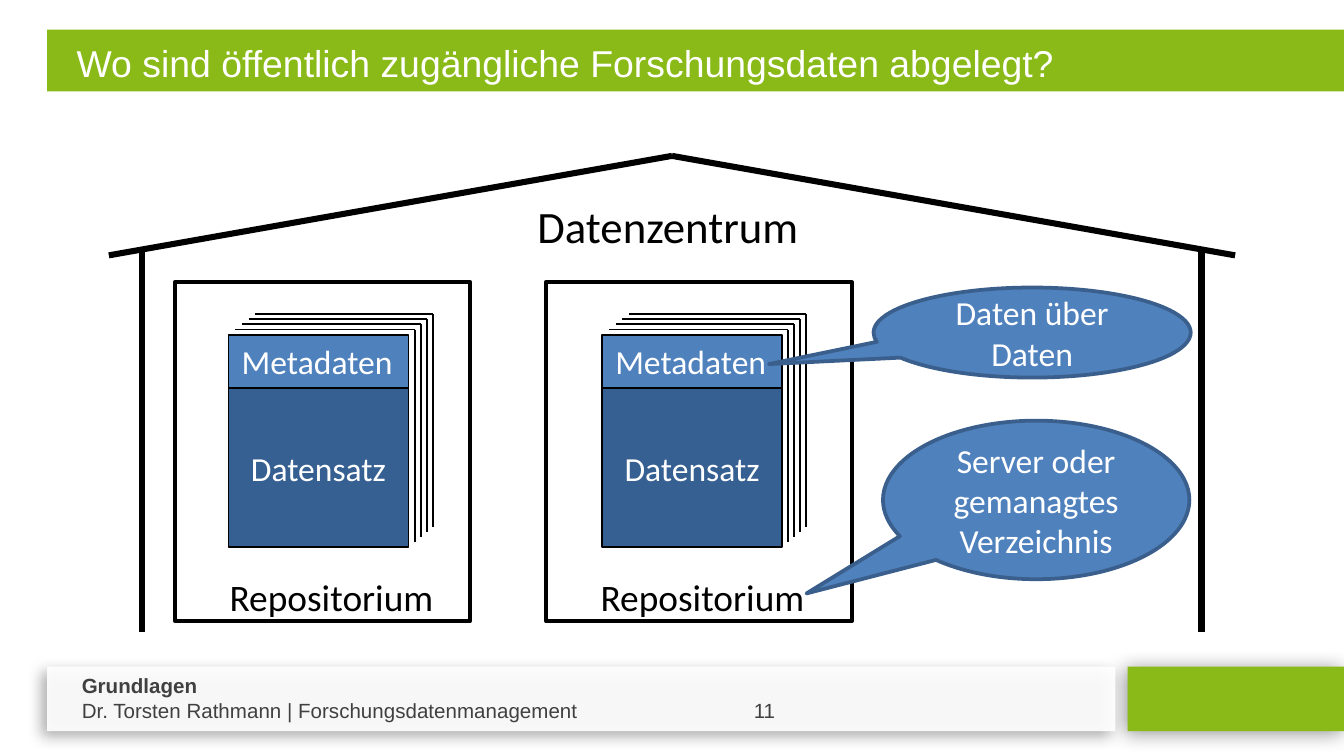
from lxml.etree import SubElement
from pptx import Presentation
from pptx.dml.color import RGBColor
from pptx.enum.shapes import MSO_CONNECTOR as Link, MSO_SHAPE as Shape
from pptx.enum.text import MSO_ANCHOR as Anchor, PP_ALIGN as Align
from pptx.oxml.ns import qn
from pptx.util import Inches, Pt

COLORS = {"green": "89BA17", "white": "FFFFFF", "grey": "404040", "black": "000000",
          "blue": "4F81BD", "navy": "376092", "edge": "3A5F8C"}
COLUMNS, ROWS = 100, 56.25
SHEETS = 4


def cells(count):
    """Convert grid cells of a tenth of an inch to a length."""
    return Inches(count / 10)


def color(name):
    """Look up a colour by name."""
    return RGBColor.from_string(COLORS[name])


def write(box, text, size, ink, font="Calibri", align=Align.LEFT, anchor=Anchor.TOP, wrap=True):
    """Put formatted text into a shape."""
    frame = box.text_frame
    frame.text = text
    frame.word_wrap = wrap
    frame.vertical_anchor = anchor
    for para in frame.paragraphs:
        para.alignment = align
        for span in para.runs:
            span.font.name, span.font.size = font, Pt(size)
            span.font.color.rgb = color(ink)


def add_label(slide, left, top, width, height, text, size, **style):
    """Add a text box."""
    box = slide.shapes.add_textbox(*map(cells, (left, top, width, height)))
    write(box, text, size, **style)
    return box


def add_block(slide, left, top, width, height, fill=None, line=None, weight=1, kind=Shape.RECTANGLE):
    """Add a flat shape with optional fill and outline."""
    block = slide.shapes.add_shape(kind, *map(cells, (left, top, width, height)))
    block.shadow.inherit = False
    if fill:
        block.fill.solid()
        block.fill.fore_color.rgb = color(fill)
    else:
        block.fill.background()
    if line:
        block.line.color.rgb = color(line)
        block.line.width = Pt(weight)
    else:
        block.line.fill.background()
    return block


def add_line(slide, start, end, weight=1):
    """Draw a straight black line between two grid points."""
    line = slide.shapes.add_connector(Link.STRAIGHT, *map(cells, (*start, *end)))
    line.line.color.rgb = color("black")
    line.line.width = Pt(weight)
    SubElement(line._element.spPr, qn("a:effectLst"))


def add_alpha(parent, percent):
    """Set the opacity of a colour element."""
    SubElement(parent, qn("a:alpha"), val=str(percent * 1000))


def add_shadow(block, opacity, blur, distance, angle):
    """Give a shape an outer shadow."""
    effects = block._element.spPr.find(qn("a:effectLst"))
    shadow = SubElement(effects, qn("a:outerShdw"), blurRad=str(Pt(blur)), dist=str(Pt(distance)),
                        dir=str(angle * 60000), algn="tl", rotWithShape="0")
    add_alpha(SubElement(shadow, qn("a:srgbClr"), val=COLORS["black"]), opacity)


def add_footer(slide):
    """Draw the footer panels and their text."""
    accent = add_block(slide, 83.9, 49.6, 16.1, 4.8, "green")
    add_shadow(accent, 42, 10.8, 2, 142)
    panel = add_block(slide, 3.5, 49.6, 79.5, 4.8, "white")
    add_alpha(panel._element.spPr.find(qn("a:solidFill"))[0], 91)
    add_shadow(panel, 34, 7.5, 4, 145)
    text = "Grundlagen\nDr. Torsten Rathmann | Forschungsdatenmanagement\t\t\t11"
    box = add_label(slide, 5.1, 49.6, 59.8, 4.7, text, 11, ink="grey", font="Arial")
    topic, author = box.text_frame.paragraphs
    topic.runs[0].font.bold = True
    tabs = SubElement(author._p.get_or_add_pPr(), qn("a:tabLst"))
    for stop in (40, 45, 50):
        SubElement(tabs, qn("a:tab"), pos=str(cells(stop)), algn="l")


def add_title(slide, text):
    """Place the title on its green bar."""
    bar = add_block(slide, 3.5, 2.2, 96.9, 4.6, "green")
    title = slide.shapes.title
    title.left, title.top, title.width, title.height = map(cells, (3.5, 2.2, 96.9, 3.5))
    bar._element.addnext(title._element)
    write(title, text, 20, "white", "Arial")
    frame = title.text_frame
    frame.margin_left, frame.margin_top = cells(1), cells(0.8)
    frame.paragraphs[0]._p.get_or_add_pPr().set("marL", str(cells(1.2)))


def add_house(slide):
    """Draw the walls and the roof of the data centre."""
    middle = COLUMNS / 2
    for side in (-1, 1):
        wall, eave = middle + side * 39.4, middle + side * 41.9
        add_line(slide, (wall, 47), (wall, 18.7), 3.25)
        add_line(slide, (eave, 19), (middle, 11.6), 3.25)
    add_label(slide, 39, 14.3, 21.6, 5, "Datenzentrum", 24, ink="black", wrap=False)


def add_records(slide, left, top=24.9, width=13.4):
    """Draw a stack of data records with the front one labelled."""
    metadata = add_block(slide, left, top, width, 4, "blue", "black")
    write(metadata, "Metadaten", 18, "white", wrap=False)
    dataset = add_block(slide, left, top + 4, width, 11.8, "navy", "black")
    write(dataset, "Datensatz", 18, "white", align=Align.CENTER, anchor=Anchor.MIDDLE)
    for sheet in range(1, SHEETS + 1):
        right, upper = left + width + 0.45 * sheet, top - 0.38 * sheet
        add_line(slide, (left + 0.5 * sheet, upper), (right, upper))
        add_line(slide, (right, upper), (right, upper + 15.8))


def add_repository(slide, left, width, records, label):
    """Draw a repository frame with its records and name."""
    add_block(slide, left, 21, width, 25.2, line="black", weight=2)
    add_records(slide, records)
    add_label(slide, label, 42.2, 17.3, 4.4, "Repositorium", 20, ink="black", wrap=False)


def add_callout(slide, area, tip, text):
    """Add an explaining speech bubble."""
    bubble = add_block(slide, *area, "blue", "edge", 2, Shape.OVAL_CALLOUT)
    bubble.adjustments[0], bubble.adjustments[1] = tip
    write(bubble, text, 18, "white", align=Align.CENTER, anchor=Anchor.MIDDLE)


def main():
    """Build the slide and save the deck."""
    deck = Presentation()
    deck.slide_width, deck.slide_height = cells(COLUMNS), cells(ROWS)
    slide = deck.slides.add_slide(deck.slide_layouts[5])
    add_footer(slide)
    add_title(slide, "Wo sind öffentlich zugängliche Forschungsdaten abgelegt?")
    add_house(slide)
    add_repository(slide, 13, 22, records=17, label=16.1)
    add_repository(slide, 40.6, 22.8, records=44.8, label=43.7)
    add_callout(slide, (65, 21.4, 23.6, 6.7), (-0.83, 0.35), "Daten über Daten")
    add_callout(slide, (65.7, 31.3, 22.8, 11.8), (-0.75, 0.59), "Server oder gemanagtes Verzeichnis")
    deck.save("out.pptx")


if __name__ == "__main__":
    main()
